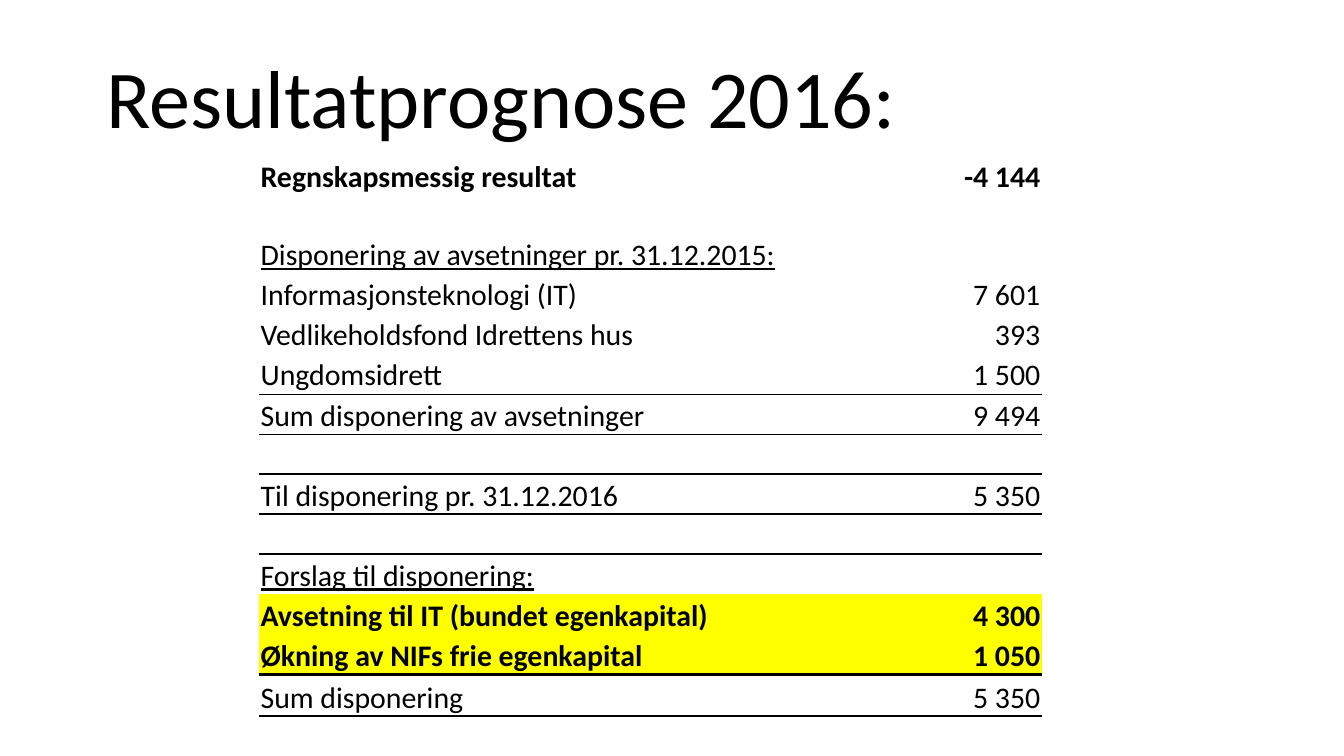
from lxml import etree
from pptx import Presentation
from pptx import util as u
from pptx.dml.color import RGBColor
from pptx.enum import text
from pptx.oxml.ns import qn

BLACK = RGBColor(0x00, 0x00, 0x00)
YELLOW = RGBColor(0xFF, 0xFF, 0x00)
FONT = "Calibri"
PLAIN_TABLE_STYLE = "{2D5ABB26-0587-4C30-8999-92F81FD0307C}"
SLIDE_WIDTH = u.Inches(10)
SLIDE_HEIGHT = SLIDE_WIDTH * 9 // 16
LABEL_WIDTH, AMOUNT_WIDTH = u.Inches(4.4), u.Inches(1.42)
TABLE_HEIGHT = u.Inches(4.17)
TALL_ROWS = {1: u.Inches(0.58), 12: u.Inches(0.31)}

RESULT_ROWS = [
    ("Regnskapsmessig resultat", "-4 144", "total"),
    ("Disponering av avsetninger pr. 31.12.2015:", "", "heading"),
    ("Informasjonsteknologi (IT)", "7 601", "plain"),
    ("Vedlikeholdsfond Idrettens hus", "393", "plain"),
    ("Ungdomsidrett", "1 500", "plain"),
    ("Sum disponering av avsetninger", "9 494", "plain"),
    ("", "", "plain"),
    ("Til disponering pr. 31.12.2016", "5 350", "plain"),
    ("", "", "plain"),
    ("Forslag til disponering:", "", "heading"),
    ("Avsetning til IT (bundet egenkapital)", "4 300", "proposal"),
    ("Økning av NIFs frie egenkapital", "1 050", "proposal"),
    ("Sum disponering", "5 350", "plain"),
]
RULES_BELOW = {4: 0.5, 6: 1, 7: 1, 11: 1.5, 12: 1.5}


def add_run(paragraph, wording, size, bold=False, underline=False):
    run = paragraph.add_run()
    run.text = wording
    run.font.name = FONT
    run.font.size = u.Pt(size)
    run.font.bold = bold
    run.font.underline = underline
    run.font.color.rgb = BLACK


def add_title(slide, wording):
    title = slide.shapes.title
    title.left, title.top = int(SLIDE_WIDTH * 0.069), u.Inches(0.3)
    title.width, title.height = int(SLIDE_WIDTH * 0.862), u.Inches(1.09)
    title.text_frame.vertical_anchor = text.MSO_ANCHOR.MIDDLE
    title.text_frame.margin_bottom = u.Inches(0.23)
    heading = title.text_frame.paragraphs[0]
    heading.alignment = text.PP_ALIGN.LEFT
    heading.line_spacing = 0.9
    add_run(heading, wording, 44)


def set_border(cell, side, width):
    properties = cell._tc.get_or_add_tcPr()
    line = etree.Element(qn(f"a:{side}"), w=str(u.Pt(width)))
    fill = etree.SubElement(line, qn("a:solidFill"))
    etree.SubElement(fill, qn("a:srgbClr"), val=str(BLACK))
    borders = properties.findall(qn("a:lnT"))
    properties.insert(len(borders), line)


def fill_cell(cell, wording, style, alignment):
    cell.margin_left = cell.margin_right = cell.margin_top = u.Inches(0.01)
    cell.margin_bottom = 0
    cell.vertical_anchor = text.MSO_ANCHOR.BOTTOM
    if style == "proposal":
        cell.fill.solid()
        cell.fill.fore_color.rgb = YELLOW
    else:
        cell.fill.background()
    paragraph = cell.text_frame.paragraphs[0]
    paragraph.alignment = alignment
    if wording:
        add_run(paragraph, wording, 16, style in ("total", "proposal"), style == "heading")
    else:
        etree.SubElement(paragraph._p, qn("a:endParaRPr"), sz="1600")


def add_result_table(slide):
    usual_height = (TABLE_HEIGHT - sum(TALL_ROWS.values())) // (len(RESULT_ROWS) - len(TALL_ROWS))
    frame = slide.shapes.add_table(
        len(RESULT_ROWS), 2, int(SLIDE_WIDTH * 0.193), u.Inches(1.16),
        LABEL_WIDTH + AMOUNT_WIDTH, TABLE_HEIGHT)
    results = frame.table
    results.first_row = results.horz_banding = False
    results._tbl.tblPr.find(qn("a:tableStyleId")).text = PLAIN_TABLE_STYLE
    results.columns[0].width, results.columns[1].width = LABEL_WIDTH, AMOUNT_WIDTH
    alignments = (text.PP_ALIGN.LEFT, text.PP_ALIGN.RIGHT)
    for row, (label, amount, style) in enumerate(RESULT_ROWS):
        results.rows[row].height = TALL_ROWS.get(row, usual_height)
        for column, wording in enumerate((label, amount)):
            cell = results.cell(row, column)
            fill_cell(cell, wording, style, alignments[column])
            for side, rule_row in (("lnT", row - 1), ("lnB", row)):
                if rule_row in RULES_BELOW:
                    set_border(cell, side, RULES_BELOW[rule_row])


def main():
    deck = Presentation()
    deck.slide_width, deck.slide_height = SLIDE_WIDTH, SLIDE_HEIGHT
    slide = deck.slides.add_slide(deck.slide_layouts[5])
    add_title(slide, "Resultatprognose 2016:")
    add_result_table(slide)
    deck.save("out.pptx")


if __name__ == "__main__":
    main()
